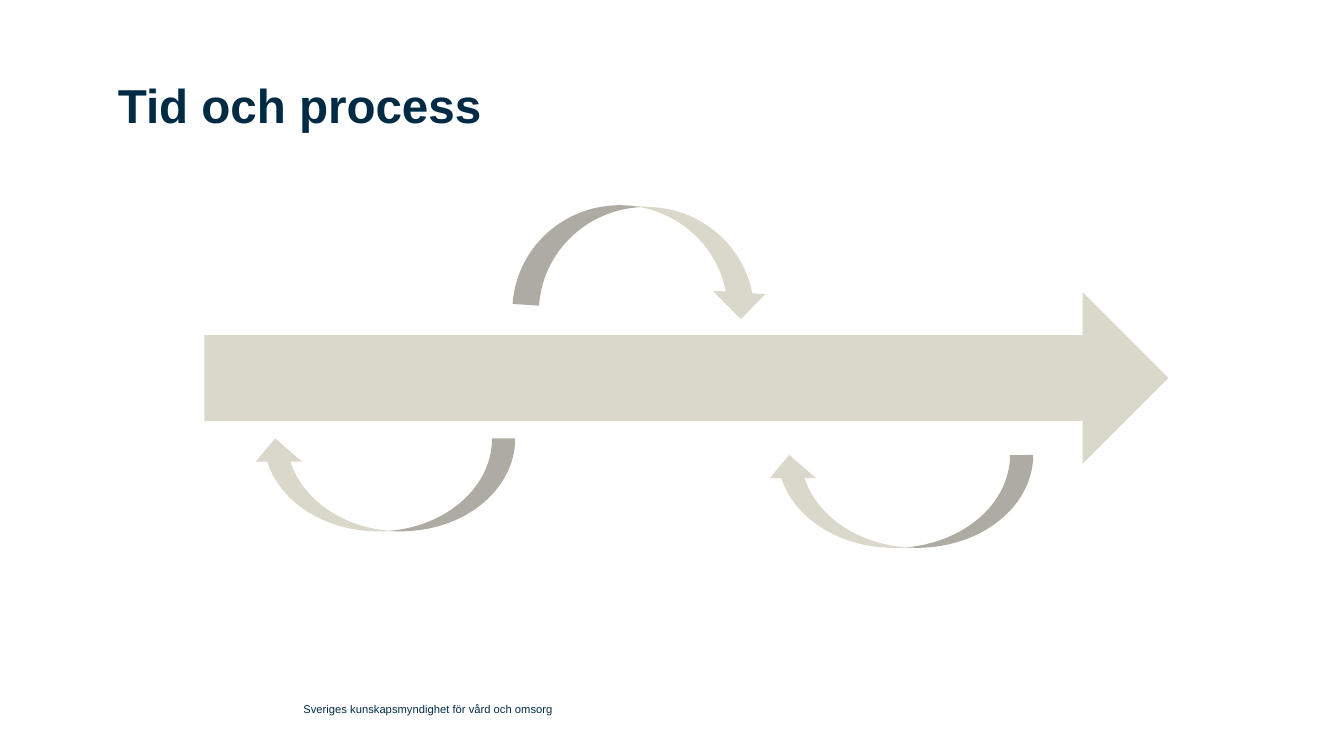
from pptx import Presentation
from pptx.dml.color import RGBColor
from pptx.enum.shapes import MSO_SHAPE as Shape
from pptx.enum.text import MSO_ANCHOR as Anchor, PP_ALIGN as Align
from pptx.util import Pt

NAVY = "002B45"
SAND = "DAD7CB"


def color(hex_code):
    return RGBColor.from_string(hex_code)


class ProcessSlide:
    font = "Arial"

    def __init__(self, deck):
        self.slide = deck.slides.add_slide(deck.slide_layouts[5])

    def add_text(self, box, text, size, anchor, bold=False):
        """Fill a text shape with one left-aligned run and no insets."""
        frame = box.text_frame
        frame.word_wrap = True
        frame.vertical_anchor = anchor
        frame.margin_left = frame.margin_top = Pt(0)
        frame.margin_right = frame.margin_bottom = Pt(0)
        paragraph = frame.paragraphs[0]
        paragraph.alignment = Align.LEFT
        run = paragraph.add_run()
        run.text = text
        run.font.name = self.font
        run.font.size = Pt(size)
        run.font.bold = bold
        run.font.color.rgb = color(NAVY)

    def title(self, text, left, top, width, height):
        heading = self.slide.shapes.title
        heading.left, heading.top = Pt(left), Pt(top)
        heading.width, heading.height = Pt(width), Pt(height)
        self.add_text(heading, text, 34, Anchor.TOP, bold=True)

    def label(self, text, left, top, width, height):
        box = self.slide.shapes.add_textbox(Pt(left), Pt(top), Pt(width), Pt(height))
        self.add_text(box, text, 8, Anchor.MIDDLE)

    def arrow(self, kind, left, top, width, height, rotation=0):
        arrow = self.slide.shapes.add_shape(kind, Pt(left), Pt(top), Pt(width), Pt(height))
        arrow.rotation = rotation
        arrow.shadow.inherit = False
        arrow.fill.solid()
        arrow.fill.fore_color.rgb = color(SAND)
        arrow.line.fill.background()


def main():
    deck = Presentation()
    deck.slide_width, deck.slide_height = Pt(960), Pt(540)

    process = ProcessSlide(deck)
    process.title("Tid och process", 84.2, 54, 730, 102.2)
    process.arrow(Shape.RIGHT_ARROW, 146, 208.8, 688.5, 122.4)

    feedback_loops = [
        (180, 313.2, 188, 66.3, 180),
        (368.5, 147.6, 182.2, 75.6, 3.8),
        (547.2, 325, 190.8, 66.3, 180),
    ]
    for loop in feedback_loops:
        process.arrow(Shape.CURVED_DOWN_ARROW, *loop)

    process.label("Sveriges kunskapsmyndighet för vård och omsorg", 216.7, 496, 425.5, 21)
    deck.save("out.pptx")


if __name__ == "__main__":
    main()
